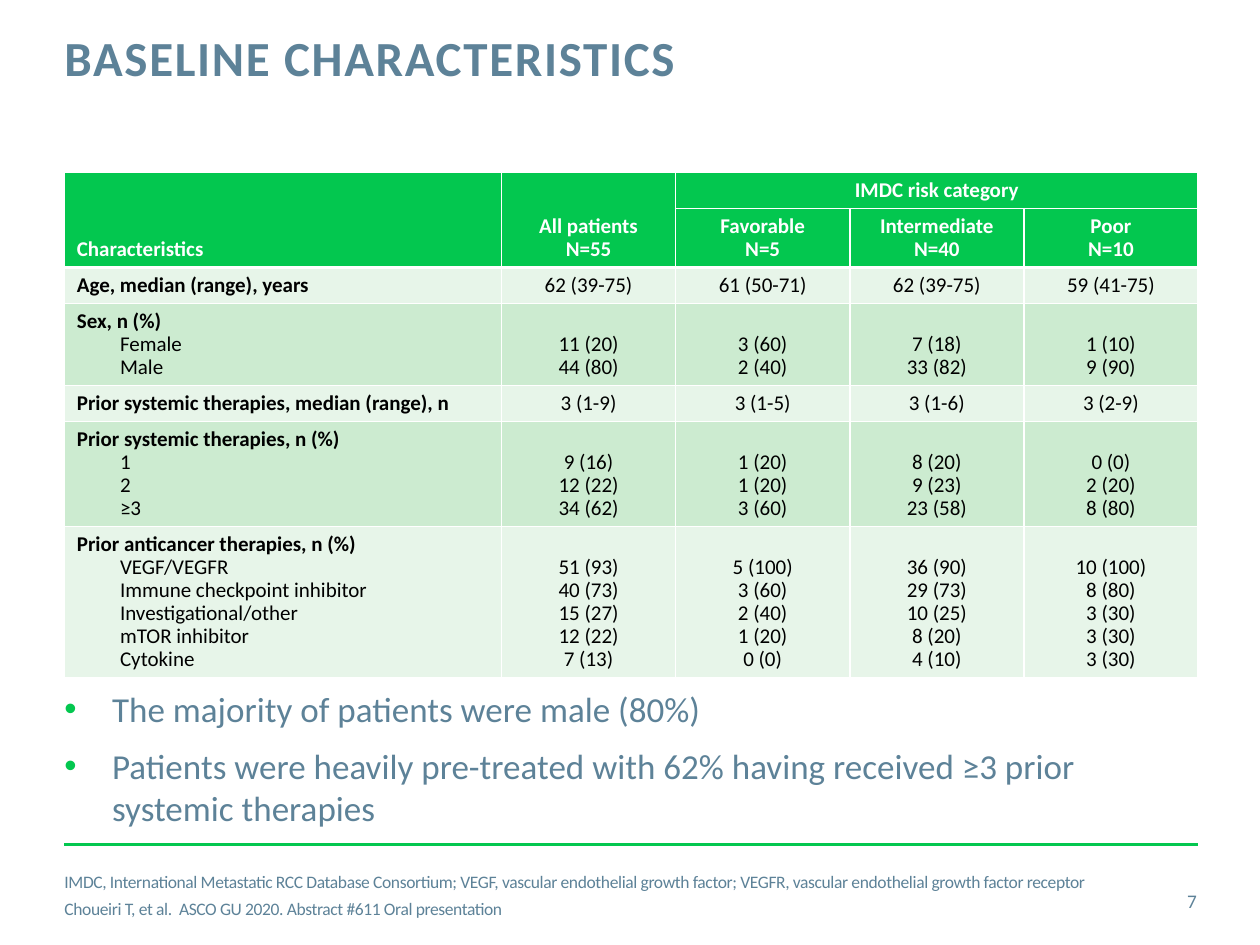
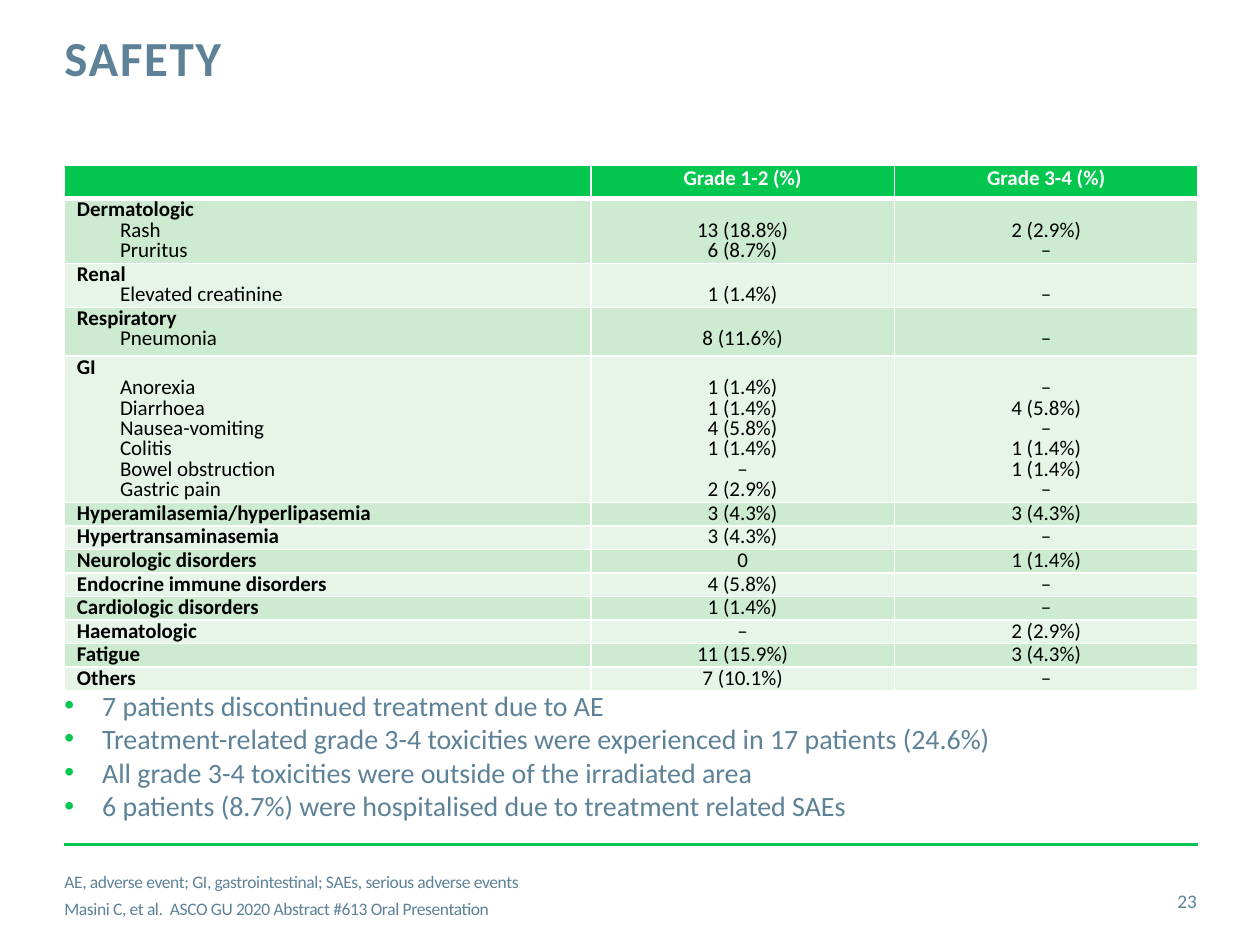
from lxml.etree import SubElement
from pptx import Presentation
from pptx.dml.color import RGBColor
from pptx.enum.shapes import MSO_CONNECTOR
from pptx.enum.text import MSO_ANCHOR, MSO_AUTO_SIZE, PP_ALIGN
from pptx.oxml.ns import qn
from pptx.util import Cm, Pt

GREEN, SLATE, WHITE, BLACK = "03C74F", "5D8298", "FFFFFF", "000000"
LIGHT_BAND, DARK_BAND = "E7F5E9", "CCEBD0"
FONT = "Calibri"
LEFT, CONTENT_WIDTH = 1.3, 22.86
TABLE_SIZE = 12
LINE_HEIGHT = 1.22

BASELINE = {
    "title": "BASELINE CHARACTERISTICS",
    "number": "7",
    "notes": [
        "IMDC, International Metastatic RCC Database Consortium; VEGF, vascular endothelial growth factor; "
        "VEGFR, vascular endothelial growth factor receptor",
        "Choueiri T, et al.  ASCO GU 2020. Abstract #611 Oral presentation",
    ],
    "bullets": [
        "The majority of patients were male (80%)",
        "Patients were heavily pre-treated with 62% having received ≥3 prior systemic therapies",
    ],
    "bullet_style": {"top": 13.72, "width": 20.98, "height": 3.15, "size": 20, "indent": 0.96, "gap": 9},
    "table": {
        "top": 3.48, "columns": [8.81, 3.51, 3.51, 3.51, 3.51],
        "spacing": 0.9, "padding": 0.13, "bands": [LIGHT_BAND, DARK_BAND],
        "header_heights": [0.72, 1.18], "header_padding": 0.13,
        "header_anchor": MSO_ANCHOR.BOTTOM, "header_rule": 2.25,
        "merges": [(0, 0, 1, 0), (0, 1, 1, 1), (0, 2, 0, 4)],
        "extra_heights": {},
        "rows": [
            ["Characteristics", "All patients\nN=55", "IMDC risk category", "", ""],
            ["", "", "Favorable\nN=5", "Intermediate\nN=40", "Poor\nN=10"],
            ["Age, median (range), years", "62 (39-75)", "61 (50-71)", "62 (39-75)", "59 (41-75)"],
            ["Sex, n (%)\nFemale\nMale", "11 (20)\n44 (80)", "3 (60)\n2 (40)", "7 (18)\n33 (82)",
             "1 (10)\n9 (90)"],
            ["Prior systemic therapies, median (range), n", "3 (1-9)", "3 (1-5)", "3 (1-6)", "3 (2-9)"],
            ["Prior systemic therapies, n (%)\n1\n2\n≥3", "9 (16)\n12 (22)\n34 (62)",
             "1 (20)\n1 (20)\n3 (60)", "8 (20)\n9 (23)\n23 (58)", "0 (0)\n2 (20)\n8 (80)"],
            ["Prior anticancer therapies, n (%)\nVEGF/VEGFR\nImmune checkpoint inhibitor\n"
             "Investigational/other\nmTOR inhibitor\nCytokine",
             "51 (93)\n40 (73)\n15 (27)\n12 (22)\n7 (13)",
             "5 (100)\n3 (60)\n2 (40)\n1 (20)\n0 (0)",
             "36 (90)\n29 (73)\n10 (25)\n8 (20)\n4 (10)",
             "10 (100)\n8 (80)\n3 (30)\n3 (30)\n3 (30)"],
        ],
    },
}

SAFETY = {
    "title": "SAFETY",
    "number": "23",
    "notes": [
        "AE, adverse event; GI, gastrointestinal; SAEs, serious adverse events",
        "Masini C, et al.  ASCO GU 2020 Abstract #613 Oral Presentation",
    ],
    "bullets": [
        "7 patients discontinued treatment due to AE",
        "Treatment-related grade 3-4 toxicities were experienced in 17 patients (24.6%)",
        "All grade 3-4 toxicities were outside of the irradiated area",
        "6 patients (8.7%) were hospitalised due to treatment related SAEs",
    ],
    "bullet_style": {"top": 13.74, "width": 22.83, "height": 3, "size": 16, "indent": 0.76, "gap": 0},
    "table": {
        "top": 3.33, "columns": [10.61, 6.12, 6.12],
        "spacing": 0.8, "padding": 0.03, "bands": [DARK_BAND, LIGHT_BAND],
        "header_heights": [0.66], "header_padding": 0.08,
        "header_anchor": MSO_ANCHOR.TOP, "header_rule": 3,
        "merges": [],
        "extra_heights": {3: 0.1},
        "rows": [
            ["", "Grade 1-2 (%)", "Grade 3-4 (%)"],
            ["Dermatologic\nRash\nPruritus", "13 (18.8%)\n6 (8.7%)", "2 (2.9%)\n–"],
            ["Renal\nElevated creatinine", "1 (1.4%)", "–"],
            ["Respiratory\nPneumonia", "8 (11.6%)", "–"],
            ["GI\nAnorexia\nDiarrhoea\nNausea-vomiting\nColitis\nBowel obstruction\nGastric pain",
             "1 (1.4%)\n1 (1.4%)\n4 (5.8%)\n1 (1.4%)\n–\n2 (2.9%)",
             "–\n4 (5.8%)\n–\n1 (1.4%)\n1 (1.4%)\n–"],
            ["Hyperamilasemia/hyperlipasemia", "3 (4.3%)", "3 (4.3%)"],
            ["Hypertransaminasemia", "3 (4.3%)", "–"],
            ["Neurologic disorders", "0", "1 (1.4%)"],
            ["Endocrine immune disorders", "4 (5.8%)", "–"],
            ["Cardiologic disorders", "1 (1.4%)", "–"],
            ["Haematologic", "–", "2 (2.9%)"],
            ["Fatigue", "11 (15.9%)", "3 (4.3%)"],
            ["Others", "7 (10.1%)", "–"],
        ],
    },
}


def color(value):
    return RGBColor.from_string(value)


def set_font(paragraph, size, value=SLATE, bold=False):
    font = paragraph.font
    font.name, font.size, font.bold = FONT, Pt(size), bold
    font.color.rgb = color(value)


def set_tracking(paragraph, points):
    for run in paragraph.runs:
        run._r.get_or_add_rPr().set("spc", str(round(points * 100)))


def place(shape, left, top, width, height):
    shape.left, shape.top, shape.width, shape.height = Cm(left), Cm(top), Cm(width), Cm(height)


def prepare_frame(shape, anchor, margins=(0, 0, 0, 0)):
    frame = shape.text_frame
    frame.word_wrap, frame.auto_size, frame.vertical_anchor = True, MSO_AUTO_SIZE.NONE, anchor
    frame.margin_left, frame.margin_top, frame.margin_right, frame.margin_bottom = map(Cm, margins)
    return frame


def write_lines(frame, lines):
    frame.text = "\n".join(lines)
    return frame.paragraphs


def add_title(slide, text):
    title = slide.shapes.title
    place(title, LEFT, 0.69, 18.21, 2.24)
    paragraph = write_lines(prepare_frame(title, MSO_ANCHOR.TOP), [text])[0]
    paragraph.alignment, paragraph.line_spacing = PP_ALIGN.LEFT, Pt(30)
    set_font(paragraph, 28, bold=True)
    set_tracking(paragraph, 1)


def add_bullets(slide, lines, style):
    body = slide.placeholders[1]
    place(body, LEFT, style["top"], style["width"], style["height"])
    frame = prepare_frame(body, MSO_ANCHOR.TOP, (0, 0.13, 0.25, 0.13))
    for index, paragraph in enumerate(write_lines(frame, lines)):
        paragraph.space_before = Pt(style["gap"] if index else 0)
        properties = paragraph._p.get_or_add_pPr()
        properties.set("marL", str(Cm(style["indent"])))
        properties.set("indent", str(-Cm(style["indent"])))
        SubElement(SubElement(properties, qn("a:buClr")), qn("a:srgbClr"), val=GREEN)
        SubElement(properties, qn("a:buFont"), typeface="Arial")
        SubElement(properties, qn("a:buChar"), char="•")
        set_font(paragraph, style["size"])


def add_footer(slide, notes, number):
    rule = slide.shapes.add_connector(
        MSO_CONNECTOR.STRAIGHT, Cm(LEFT), Cm(17.02), Cm(LEFT + CONTENT_WIDTH), Cm(17.02))
    rule.line.color.rgb, rule.line.width = color(GREEN), Pt(2)
    SubElement(rule._element.spPr, qn("a:effectLst"))

    note_box = slide.shapes.add_textbox(Cm(LEFT), Cm(17.27), Cm(21.21), Cm(1.55))
    for index, paragraph in enumerate(write_lines(prepare_frame(note_box, MSO_ANCHOR.MIDDLE), notes)):
        paragraph.space_before = Pt(3 if index else 0)
        set_font(paragraph, 10)
        set_tracking(paragraph, -0.2)

    number_box = slide.shapes.add_textbox(Cm(22.5), Cm(17.65), Cm(1.63), Cm(1.02))
    paragraph = write_lines(prepare_frame(number_box, MSO_ANCHOR.MIDDLE), [number])[0]
    paragraph.alignment = PP_ALIGN.RIGHT
    set_font(paragraph, 11)


def set_borders(cell, top=1, bottom=1):
    properties = cell._tc.get_or_add_tcPr()
    for side, width in (("L", 1), ("R", 1), ("T", top), ("B", bottom)):
        line = SubElement(properties, qn(f"a:ln{side}"), w=str(Pt(width)))
        SubElement(SubElement(line, qn("a:solidFill")), qn("a:srgbClr"), val=WHITE)


def fill_cell(cell, lines, fill, padding, anchor, offset=0):
    cell.fill.solid()
    cell.fill.fore_color.rgb = color(fill)
    cell.vertical_anchor = anchor
    cell.margin_left = cell.margin_right = Cm(0.25)
    cell.margin_top, cell.margin_bottom = Cm(padding) + offset, Cm(padding)
    return write_lines(cell.text_frame, lines)


def add_table(slide, layout):
    rows, columns = layout["rows"], layout["columns"]
    header_count = len(layout["header_heights"])
    pitch = Pt(TABLE_SIZE * LINE_HEIGHT * layout["spacing"])
    heights = [Cm(height) for height in layout["header_heights"]]
    for index, row in enumerate(rows[header_count:], header_count):
        line_count = row[0].count("\n") + 1
        extra = layout["extra_heights"].get(index, 0)
        heights.append(pitch * line_count + Cm(2 * layout["padding"] + extra))

    table = slide.shapes.add_table(
        len(rows), len(columns), Cm(LEFT), Cm(layout["top"]), Cm(sum(columns)), sum(heights)).table
    table.horz_banding = False
    for column, width in zip(table.columns, columns):
        column.width = Cm(width)
    for table_row, height in zip(table.rows, heights):
        table_row.height = height
    for top, left, bottom, right in layout["merges"]:
        table.cell(top, left).merge(table.cell(bottom, right))

    for row_index, row in enumerate(rows):
        is_header = row_index < header_count
        label_lines = row[0].split("\n")
        for column_index, text in enumerate(row):
            cell, lines = table.cell(row_index, column_index), text.split("\n")
            if is_header:
                last_row = row_index + cell.span_height
                set_borders(cell, bottom=layout["header_rule"] if last_row == header_count else 1)
                paragraphs = fill_cell(
                    cell, lines, GREEN, layout["header_padding"], layout["header_anchor"])
            else:
                set_borders(cell, top=layout["header_rule"] if row_index == header_count else 1)
                band = layout["bands"][(row_index - header_count) % 2]
                offset = pitch * (len(label_lines) - len(lines))
                paragraphs = fill_cell(cell, lines, band, layout["padding"], MSO_ANCHOR.TOP, offset)
            for line_index, paragraph in enumerate(paragraphs):
                is_label = column_index == 0
                paragraph.alignment = PP_ALIGN.LEFT if is_label else PP_ALIGN.CENTER
                paragraph.line_spacing = layout["spacing"]
                if is_label and line_index:
                    paragraph._p.get_or_add_pPr().set("marL", str(Cm(0.87)))
                bold = is_header or (is_label and line_index == 0)
                set_font(paragraph, TABLE_SIZE, WHITE if is_header else BLACK, bold)
                if not text:
                    SubElement(paragraph._p, qn("a:endParaRPr"), sz=str(TABLE_SIZE * 100))


def main():
    """Build the two result slides and save them."""
    presentation = Presentation()
    presentation.slide_width, presentation.slide_height = Cm(25.4), Cm(19.05)
    for content in (BASELINE, SAFETY):
        slide = presentation.slides.add_slide(presentation.slide_layouts[1])
        add_title(slide, content["title"])
        add_table(slide, content["table"])
        add_bullets(slide, content["bullets"], content["bullet_style"])
        add_footer(slide, content["notes"], content["number"])
    presentation.save("out.pptx")


if __name__ == "__main__":
    main()
